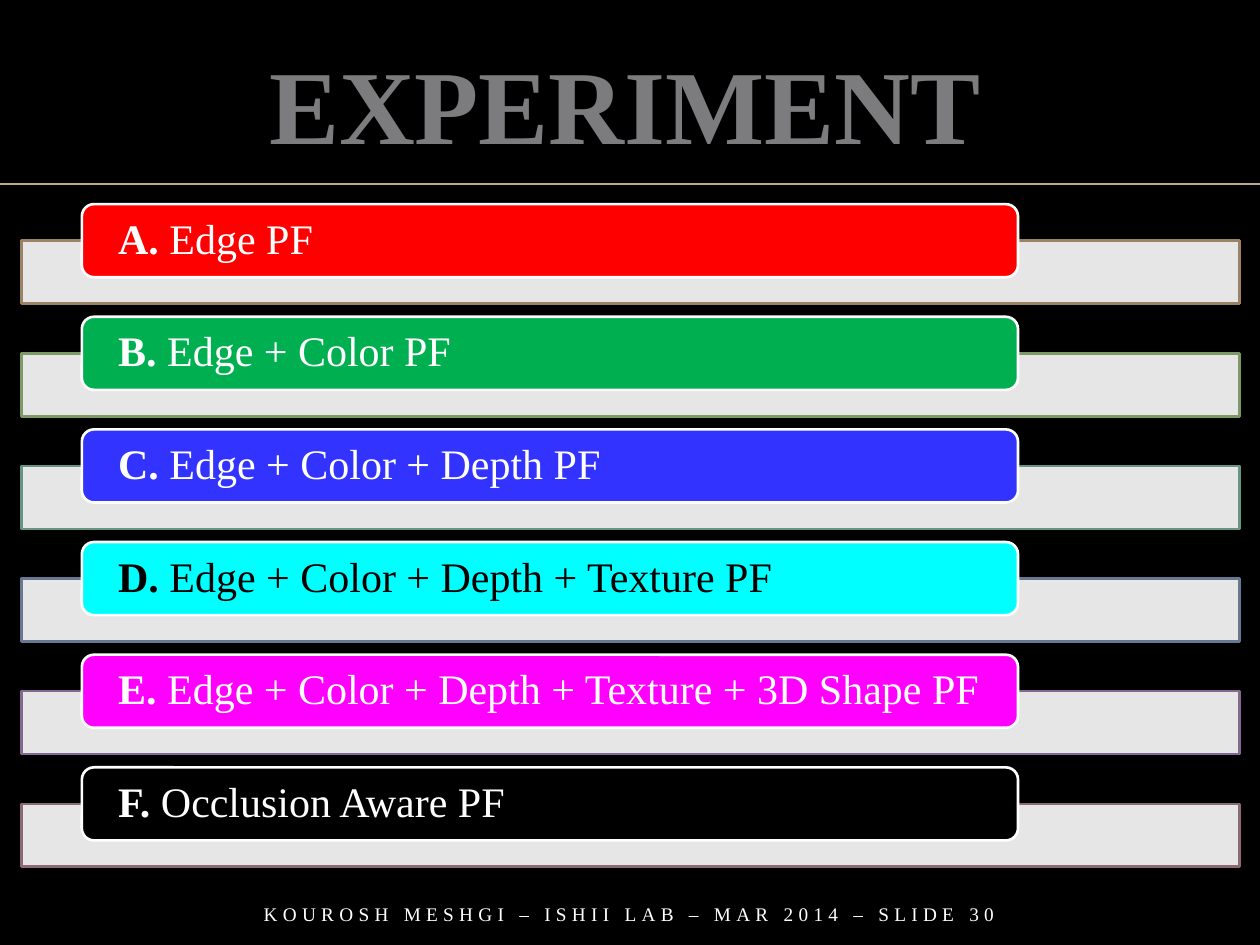
from lxml import etree
from pptx import Presentation, util as u
from pptx.dml.color import RGBColor
from pptx.enum import shapes, text
from pptx.oxml.ns import qn

FONT = "Times New Roman"
TITLE = "EXPERIMENT"
FOOTER = "KOUROSH MESHGI – ISHII LAB – MAR 2014 – SLIDE 30"
# letter, method, label fill, label text colour, bar outline
METHODS = [
    ("A. ", "Edge PF", "FF0000", "FFFFFF", "9C8265"),
    ("B. ", "Edge + Color PF", "00B050", "FFFFFF", "7C9966"),
    ("C. ", "Edge + Color + Depth PF", "3333FF", "FFFFFF", "669683"),
    ("D. ", "Edge + Color + Depth + Texture PF", "00FFFF", "000000", "677893"),
    ("E. ", "Edge + Color + Depth + Texture + 3D Shape PF", "FF00FF", "FFFFFF", "836890"),
    ("F. ", "Occlusion Aware PF", "000000", "FFFFFF", "8D6974"),
]
WIDTH, HEIGHT = 10, 7.5
FIRST_ROW, ROW_PITCH = 1.62, 0.894
BAR_LEFT, BAR_DROP, BAR_WIDTH, BAR_HEIGHT = 0.17, 0.29, 9.67, 0.5
LABEL_LEFT, LABEL_WIDTH, LABEL_HEIGHT = 0.65, 7.43, 0.58


def rgb(value):
    return RGBColor.from_string(value)


def box(left, top, width, height):
    return [u.Inches(value) for value in (left, top, width, height)]


def write(shape, runs, size, color, align=text.PP_ALIGN.LEFT,
          anchor=text.MSO_ANCHOR.MIDDLE, insets=(0.1, 0.05, 0.1, 0.05),
          line_spacing=1.0, spacing=None):
    """Fill a shape with one paragraph of (words, bold) runs."""
    frame = shape.text_frame
    frame.word_wrap = True
    frame.auto_size = text.MSO_AUTO_SIZE.NONE
    frame.vertical_anchor = anchor
    (frame.margin_left, frame.margin_top,
     frame.margin_right, frame.margin_bottom) = box(*insets)
    paragraph = frame.paragraphs[0]
    paragraph.alignment = align
    paragraph.line_spacing = line_spacing
    for words, bold in runs:
        run = paragraph.add_run()
        run.text = words
        run.font.name, run.font.size, run.font.bold = FONT, u.Pt(size), bold
        run.font.color.rgb = rgb(color)
        if spacing:
            run.font._element.set("spc", str(spacing * 100))
    return paragraph


def add_block(slide, preset, place, fill, line):
    shape = slide.shapes.add_shape(preset, *box(*place))
    shape.shadow.inherit = False
    shape.fill.solid()
    shape.fill.fore_color.rgb = rgb(fill)
    shape.line.color.rgb = rgb(line)
    shape.line.width = u.Pt(1.5)
    return shape


def outline_text(run, color, width):
    line = etree.Element(qn("a:ln"), w=str(u.Pt(width)))
    fill = etree.SubElement(line, qn("a:solidFill"))
    etree.SubElement(fill, qn("a:srgbClr"), val=color)
    run.font._element.insert(0, line)


def main():
    presentation = Presentation()
    presentation.slide_width, presentation.slide_height = u.Inches(WIDTH), u.Inches(HEIGHT)
    slide = presentation.slides.add_slide(presentation.slide_layouts[5])
    slide.background.fill.solid()
    slide.background.fill.fore_color.rgb = rgb("000000")

    # Rule under the title
    rule = slide.shapes.add_connector(
        shapes.MSO_CONNECTOR.STRAIGHT, *box(0, 1.46, WIDTH, 1.46))
    rule.line.color.rgb = rgb("BBAA8A")
    rule.line.width = u.Pt(1)
    etree.SubElement(rule._element.spPr, qn("a:effectLst"))

    # Title
    title = slide.shapes.title
    title.left, title.top, title.width, title.height = box(0.17, 0.25, 9.58, 1.11)
    heading = write(title, [(TITLE, True)], 60, "7C7C7F",
                    align=text.PP_ALIGN.CENTER, anchor=text.MSO_ANCHOR.BOTTOM)
    outline_text(heading.runs[0], "E8DECA", 1)

    # Footer
    footer = slide.shapes.add_textbox(*box(1.58, 7.09, 6.83, 0.32))
    write(footer, [(FOOTER, False)], 11, "FFFFFF",
          align=text.PP_ALIGN.CENTER, spacing=3)

    # Method list: a translucent bar with a label over its upper edge
    for row, (letter, method, fill, color, outline) in enumerate(METHODS):
        top = FIRST_ROW + row * ROW_PITCH
        bar = add_block(slide, shapes.MSO_SHAPE.RECTANGLE,
                        (BAR_LEFT, top + BAR_DROP, BAR_WIDTH, BAR_HEIGHT),
                        "FFFFFF", outline)
        white = bar._element.spPr.find(qn("a:solidFill"))[0]
        etree.SubElement(white, qn("a:alpha"), val="90000")
        label = add_block(slide, shapes.MSO_SHAPE.ROUNDED_RECTANGLE,
                          (LABEL_LEFT, top, LABEL_WIDTH, LABEL_HEIGHT),
                          fill, "FFFFFF")
        write(label, [(letter, True), (method, False)], 24, color,
              insets=(0.26, 0, 0.2, 0), line_spacing=0.9)

    presentation.save("out.pptx")


if __name__ == "__main__":
    main()
